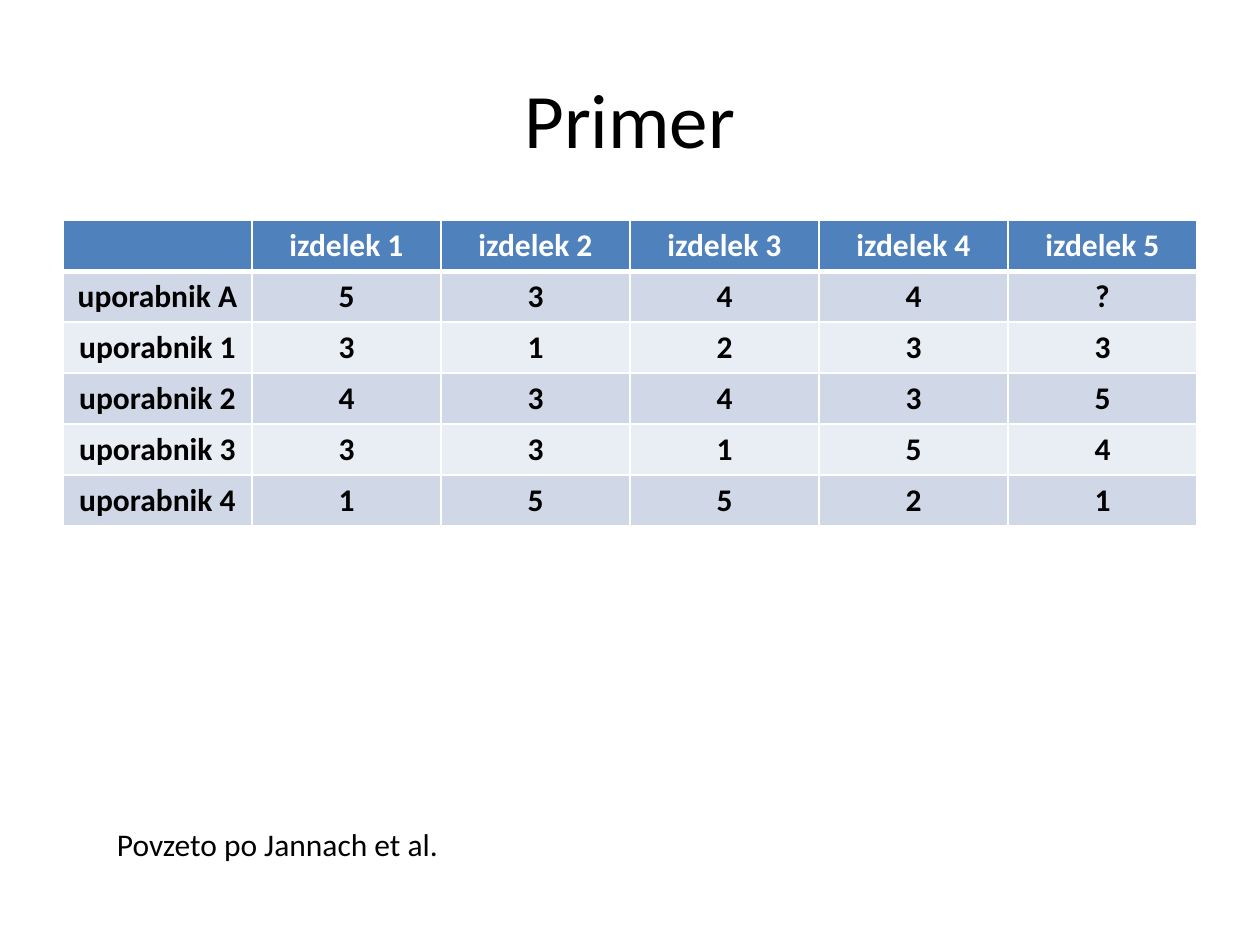
from typing import Any, NamedTuple

from lxml.etree import SubElement
from pptx import Presentation
from pptx.dml.color import RGBColor
from pptx.enum.text import MSO_ANCHOR as Anchor, PP_ALIGN as Align
from pptx.oxml.ns import qn
from pptx.util import Inches, Pt

WIDE, HIGH = Inches(10), Inches(7.5)
BLACK, WHITE, BLUE = "000000", "FFFFFF", "4F81BD"
BANDS = ("D0D8E8", "E9EDF4")
ITEMS = [""] + [f"izdelek {n}" for n in range(1, 6)]
RATINGS = {"A": "5344?", "1": "31233", "2": "43435", "3": "33154", "4": "15521"}
ROWS = [ITEMS] + [[f"uporabnik {user}", *marks] for user, marks in RATINGS.items()]


class Box(NamedTuple):
    """Left, top, width and height as shares of the slide."""
    left: float
    top: float
    width: float
    height: float

    def place(self) -> list[int]:
        return [round(share * side) for share, side in zip(self, (WIDE, HIGH) * 2)]


class Label(NamedTuple):
    text: str
    box: Box
    size: int
    align: Align
    anchor: Anchor


LABELS = [
    Label("Primer", Box(0.05, 0.04, 0.9, 0.17), 44, Align.CENTER, Anchor.MIDDLE),
    Label("Povzeto po Jannach et al.", Box(0.083, 0.867, 0.85, 0.053), 18,
          Align.LEFT, Anchor.TOP),
]
GRID = Box(0.05, 0.233, 0.9, 0.324)


def paint(target: Any, color: str) -> None:
    target.rgb = RGBColor.from_string(color)


def write(frame: Any, text: str, align: Align, color: str, **style: Any) -> None:
    para = frame.paragraphs[0]
    para.alignment = align
    run = para.add_run()
    run.text = text
    for name, value in {"name": "Calibri", **style}.items():
        setattr(run.font, name, value)
    paint(run.font.color, color)


def edge(cell: Any, sides: dict[str, int]) -> None:
    """Draw white borders; call before filling, as lines must come first."""
    props = cell._tc.get_or_add_tcPr()
    for side, width in sides.items():
        line = SubElement(props, qn(f"a:ln{side}"), w=str(Pt(width)))
        fill = SubElement(line, qn("a:solidFill"))
        SubElement(fill, qn("a:srgbClr"), val=WHITE)


def add_label(slide: Any, label: Label) -> None:
    frame = slide.shapes.add_textbox(*label.box.place()).text_frame
    frame.word_wrap = True
    frame.vertical_anchor = label.anchor
    write(frame, label.text, label.align, BLACK, size=Pt(label.size))


def add_grid(slide: Any, rows: list[list[str]], box: Box) -> None:
    table = slide.shapes.add_table(len(rows), len(rows[0]), *box.place()).table
    for r, row in enumerate(rows):
        head = r == 0
        top, base = 3 if r == 1 else 1, 3 if head else 1
        for c, text in enumerate(row):
            cell = table.cell(r, c)
            edge(cell, {"L": 1, "R": 1, "T": top, "B": base})
            cell.fill.solid()
            paint(cell.fill.fore_color, BLUE if head else BANDS[(r - 1) % 2])
            if text:
                write(cell.text_frame, text, Align.CENTER,
                      WHITE if head else BLACK, size=Pt(18), bold=True)


def main() -> None:
    deck = Presentation()
    deck.slide_width, deck.slide_height = WIDE, HIGH
    slide = deck.slides.add_slide(deck.slide_layouts[6])
    title, credit = LABELS
    add_label(slide, title)
    add_grid(slide, ROWS, GRID)
    add_label(slide, credit)
    deck.save("out.pptx")


if __name__ == "__main__":
    main()
